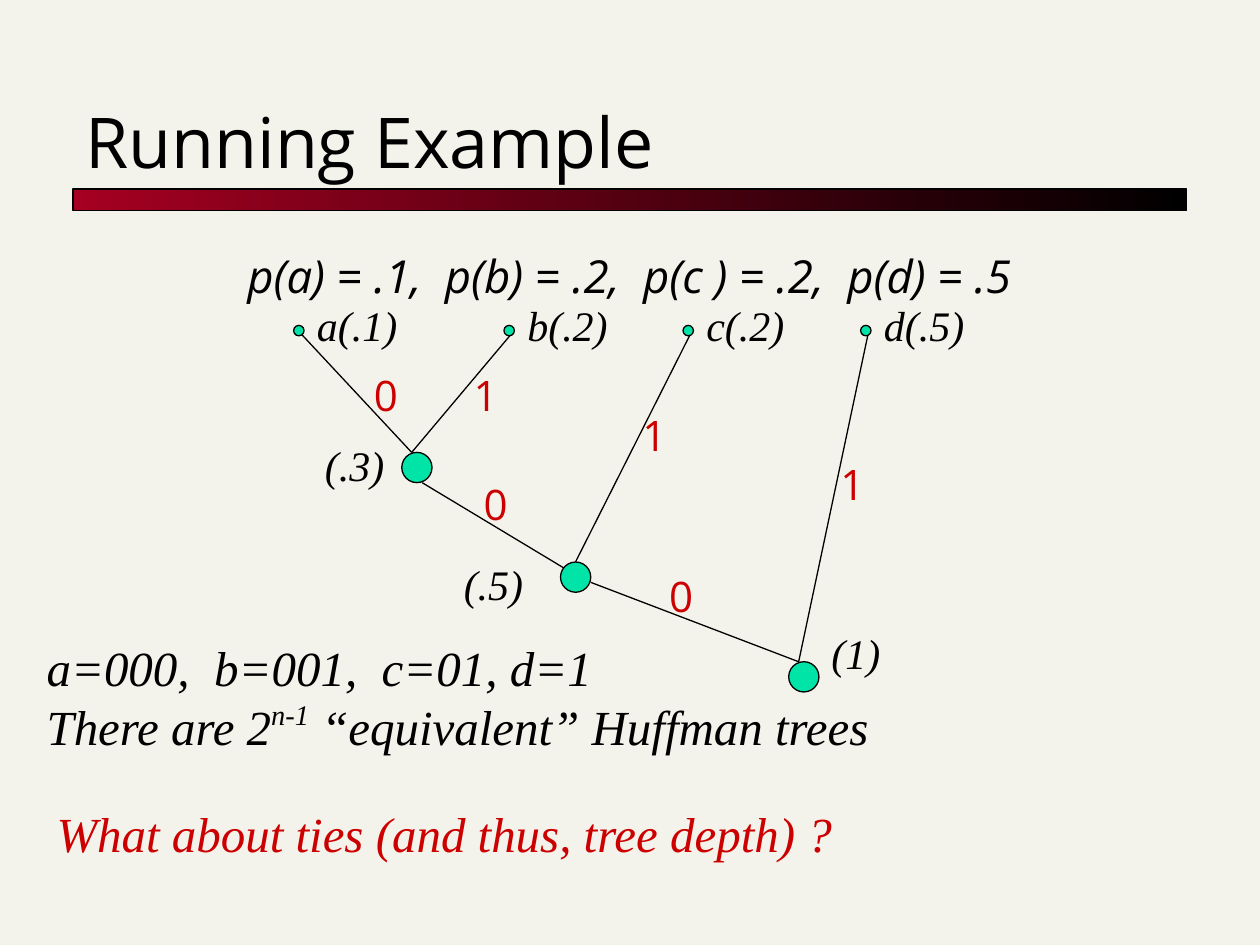
import pptx
import pptx.dml.color
import pptx.enum.shapes
import pptx.enum.text
import pptx.oxml
import pptx.oxml.ns
import pptx.util

Cm = pptx.util.Cm
Pt = pptx.util.Pt
SANS, SERIF = "Open Sans", "Times New Roman"
BLACK, RED, GREEN = "000000", "CC0000", "00E4A8"
LEAF_SIZE, JOINT_SIZE = 0.21, 0.61

# name: left, top of the dot
LEAVES = {"a(.1)": (0, 0.64), "b(.2)": (4.24, 0.64),
          "c(.2)": (7.85, 0.64), "d(.5)": (11.43, 0.64)}
# name: left, top of the circle
JOINTS = {"(.3)": (2.18, 3.2), "(.5)": (5.38, 5.41), "(1)": (9.98, 7.42)}
# name: left, top, width of the label
JOINT_LABELS = {"(.3)": (0.38, 2.82, 1.7), "(.5)": (3.18, 5.21, 1.7),
                "(1)": (10.59, 6.6, 1.5)}
# where an edge leaves its upper node, and where it meets its lower one
EXITS = {**{name: (0.15, 0.17) for name in LEAVES},
         "(.3)": (0.41, 0.61), "(.5)": (0.61, 0.41)}
ENTRIES = {"(.3)": (0.2, 0), "(.5)": (0.2, 0.2), "(1)": (0.2, 0)}
# upper node, lower node, bit, left and top of the bit
EDGES = [("a(.1)", "(.3)", "0", 1.37, 1.4), ("b(.2)", "(.3)", "1", 3.38, 1.4),
         ("(.3)", "(.5)", "0", 3.58, 3.61), ("c(.2)", "(.5)", "1", 6.78, 2.21),
         ("(.5)", "(1)", "0", 7.32, 5.46), ("d(.5)", "(1)", "1", 10.77, 3.2)]


def colour(value):
    return pptx.dml.color.RGBColor.from_string(value)


def place(shape, left, top, width, height):
    shape.left, shape.top = Cm(left), Cm(top)
    shape.width, shape.height = Cm(width), Cm(height)


def add_span(para, text, size, font, tint=BLACK, italic=False):
    span = para.add_run()
    span.text = text
    span.font.size = Pt(size)
    span.font.name = font
    span.font.italic = italic
    span.font.color.rgb = colour(tint)
    return span


def add_box(page, left, top, width, height):
    """Add an unwrapped text box and return its text frame."""
    box = page.shapes.add_textbox(Cm(left), Cm(top), Cm(width), Cm(height))
    frame = box.text_frame
    frame.word_wrap = False
    frame.auto_size = pptx.enum.text.MSO_AUTO_SIZE.SHAPE_TO_FIT_TEXT
    return frame


def add_label(page, left, top, width, text, font=SERIF, tint=BLACK, italic=True):
    frame = add_box(page, left, top, width, 1.27)
    add_span(frame.paragraphs[0], text, 24, font, tint, italic)


def add_outlined(page, kind, left, top, width, height):
    shape = page.shapes.add_shape(kind, Cm(left), Cm(top), Cm(width), Cm(height))
    shape.shadow.inherit = False
    shape.line.color.rgb = colour(BLACK)
    shape.line.width = Pt(0.75)
    return shape


def add_node(page, left, top, size):
    kind = pptx.enum.shapes.MSO_SHAPE.OVAL
    node = add_outlined(page, kind, left, top, size, size)
    node.fill.solid()
    node.fill.fore_color.rgb = colour(GREEN)


def add_edge(page, start, end):
    straight = pptx.enum.shapes.MSO_CONNECTOR.STRAIGHT
    edge = page.shapes.add_connector(straight, *(Cm(v) for v in (*start, *end)))
    edge.line.color.rgb = colour(BLACK)
    edge.line.width = Pt(0.75)
    properties = edge._element.spPr
    properties.append(pptx.oxml.parse_xml(
        "<a:effectLst %s/>" % pptx.oxml.ns.nsdecls("a")))


def add_header(page, left, top, width, height):
    """Title above a gradient bar."""
    title = page.shapes.title
    bar_height = 0.43
    place(title, left, top, width, height - bar_height)
    frame = title.text_frame
    frame.auto_size = pptx.enum.text.MSO_AUTO_SIZE.NONE
    frame.vertical_anchor = pptx.enum.text.MSO_ANCHOR.BOTTOM
    para = frame.paragraphs[0]
    para.alignment = pptx.enum.text.PP_ALIGN.LEFT
    add_span(para, "Running Example", 40, SANS)

    kind = pptx.enum.shapes.MSO_SHAPE.RECTANGLE
    bar = add_outlined(page, kind, left, top + height - bar_height, width, bar_height)
    bar.fill.gradient()
    bar.fill.gradient_angle = 0
    for stop, tint in zip(bar.fill.gradient_stops, ("A50021", BLACK)):
        stop.color.rgb = colour(tint)


def add_probabilities(page, left, top, width, height):
    body = page.placeholders[1]
    place(body, left, top, width, height)
    frame = body.text_frame
    frame.auto_size = pptx.enum.text.MSO_AUTO_SIZE.NONE
    para = frame.paragraphs[0]
    para.alignment = pptx.enum.text.PP_ALIGN.CENTER
    para.space_before = Pt(5.2)
    properties = para._p.get_or_add_pPr()
    properties.set("marL", str(Cm(0.95)))
    properties.set("indent", str(Cm(-0.95)))
    properties.append(pptx.oxml.parse_xml(
        "<a:buNone %s/>" % pptx.oxml.ns.nsdecls("a")))
    add_span(para, "p(a) = .1,  p(b) = .2,  p(c ) = .2,  p(d) = .5", 26, SANS, italic=True)


def add_tree(page, left, top):
    """Huffman tree, with its leaves at the top and its root at the bottom."""
    nodes = {**LEAVES, **JOINTS}

    def joint_point(name, offsets):
        x, y = nodes[name]
        dx, dy = offsets[name]
        return left + x + dx, top + y + dy

    for upper, lower, bit, x, y in EDGES:
        add_edge(page, joint_point(upper, EXITS), joint_point(lower, ENTRIES))
    for name, (x, y) in LEAVES.items():
        add_node(page, left + x, top + y, LEAF_SIZE)
        width = 2.08 if name.startswith("c") else 2.13
        add_label(page, left + x + 0.22, top, width, name)
    for name, (x, y) in JOINTS.items():
        add_node(page, left + x, top + y, JOINT_SIZE)
        label_x, label_y, width = JOINT_LABELS[name]
        add_label(page, left + label_x, top + label_y, width, name)
    for upper, lower, bit, x, y in EDGES:
        add_label(page, left + x, top + y, 1.04, bit, SANS, RED, False)


def add_conclusions(page, left, top):
    frame = add_box(page, left, top, 17.32, 2.62)
    add_span(frame.paragraphs[0], "a=000,  b=001,  c=01, d=1", 28, SERIF, italic=True)
    para = frame.add_paragraph()
    add_span(para, "There are 2", 28, SERIF, italic=True)
    power = add_span(para, "n-1", 28, SERIF, italic=True)
    power._r.get_or_add_rPr().set("baseline", "40000")
    add_span(para, " “equivalent” Huffman trees", 28, SERIF, italic=True)

    question = add_box(page, left + 0.2, top + 3.35, 16.21, 1.45)
    add_span(question.paragraphs[0], "What about ties (and thus, tree depth) ?",
             28, SERIF, RED, True)


def main():
    deck = pptx.Presentation()
    deck.slide_width, deck.slide_height = Cm(25.4), Cm(19.05)
    page = deck.slides.add_slide(deck.slide_layouts[1])
    page.background.fill.solid()
    page.background.fill.fore_color.rgb = colour("F4F3EB")
    add_header(page, 1.47, 1.07, 22.45, 3.17)
    add_probabilities(page, 1.9, 4.88, 21.6, 13.54)
    add_tree(page, 5.92, 5.92)
    add_conclusions(page, 0.69, 12.73)
    deck.save("out.pptx")


if __name__ == "__main__":
    main()
